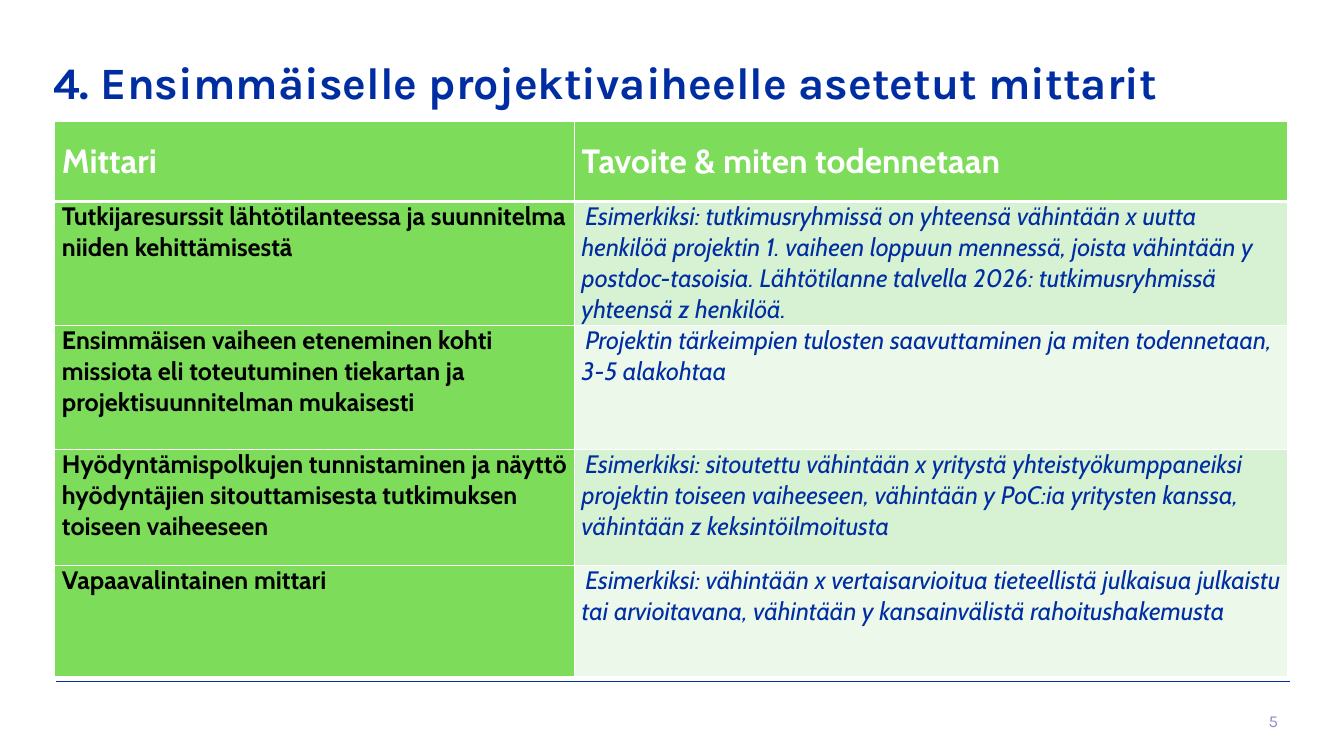
from lxml import etree
from pptx import Presentation
from pptx import util as u
from pptx.dml.color import RGBColor
from pptx.enum import shapes, text
from pptx.oxml import ns

BLUE = RGBColor(0x00, 0x2E, 0xA2)
GREY = RGBColor(0x8C, 0x8F, 0xBF)
GREEN = RGBColor(0x7D, 0xDC, 0x5A)
PALE = RGBColor(0xD7, 0xF2, 0xD2)
PALEST = RGBColor(0xEC, 0xF9, 0xEA)
WHITE = RGBColor(0xFF, 0xFF, 0xFF)
BLACK = RGBColor(0x00, 0x00, 0x00)


def write(frame, words, size, color, font="Cabin", bold=False, italic=False,
          align=text.PP_ALIGN.LEFT, spacing=1.0, indent=0):
    frame.word_wrap = True
    paragraph = frame.paragraphs[0]
    paragraph.alignment = align
    paragraph.line_spacing = spacing
    paragraph._p.get_or_add_pPr().set("indent", str(u.Cm(indent)))
    run = paragraph.add_run()
    run.text = words
    run.font.name = font
    run.font.size = u.Pt(size)
    run.font.bold = bold
    run.font.italic = italic
    run.font.color.rgb = color


def add_borders(cell, bottom):
    properties = cell._tc.get_or_add_tcPr()
    for position, side in enumerate(("lnL", "lnR", "lnT", "lnB")):
        width = bottom if side == "lnB" else 1
        line = etree.Element(ns.qn("a:" + side), w=str(u.Pt(width)))
        fill = etree.SubElement(line, ns.qn("a:solidFill"))
        etree.SubElement(fill, ns.qn("a:srgbClr"), val=str(WHITE))
        properties.insert(position, line)


presentation = Presentation()
presentation.slide_width = u.Cm(33.87)
presentation.slide_height = u.Cm(19.05)
slide = presentation.slides.add_slide(presentation.slide_layouts[6])

rule = slide.shapes.add_connector(shapes.MSO_CONNECTOR.STRAIGHT,
                                  u.Cm(1.4), u.Cm(17.17), u.Cm(32.51), u.Cm(17.17))
rule.line.color.rgb = BLUE
rule.line.width = u.Pt(0.85)
etree.SubElement(rule._element.spPr, ns.qn("a:effectLst"))

title = slide.shapes.add_textbox(u.Cm(1.09), u.Cm(0.3), u.Cm(31.12), u.Cm(3.68))
title.text_frame.vertical_anchor = text.MSO_ANCHOR.MIDDLE
write(title.text_frame, "4. Ensimmäiselle projektivaiheelle asetetut mittarit",
      32, BLUE, font="Karla", bold=True, spacing=0.9)

page_number = slide.shapes.add_textbox(u.Cm(28.04), u.Cm(17.65), u.Cm(4.42), u.Cm(1.02))
page_number.text_frame.vertical_anchor = text.MSO_ANCHOR.MIDDLE
write(page_number.text_frame, "5", 12, GREY, font="Karla", align=text.PP_ALIGN.RIGHT)

rows = [
    ("Mittari", "Tavoite & miten todennetaan"),
    ("Tutkijaresurssit lähtötilanteessa ja suunnitelma niiden kehittämisestä",
     "Esimerkiksi: tutkimusryhmissä on yhteensä vähintään x uutta henkilöä projektin "
     "1. vaiheen loppuun mennessä, joista vähintään y postdoc-tasoisia. Lähtötilanne "
     "talvella 2026: tutkimusryhmissä yhteensä z henkilöä."),
    ("Ensimmäisen vaiheen eteneminen kohti missiota eli toteutuminen tiekartan ja "
     "projektisuunnitelman mukaisesti",
     "Projektin tärkeimpien tulosten saavuttaminen ja miten todennetaan, 3-5 alakohtaa"),
    ("Hyödyntämispolkujen tunnistaminen ja näyttö hyödyntäjien sitouttamisesta "
     "tutkimuksen toiseen vaiheeseen",
     "Esimerkiksi: sitoutettu vähintään x yritystä yhteistyökumppaneiksi projektin "
     "toiseen vaiheeseen, vähintään y PoC:ia yritysten kanssa, vähintään z "
     "keksintöilmoitusta"),
    ("Vapaavalintainen mittari",
     "Esimerkiksi: vähintään x vertaisarvioitua tieteellistä julkaisua julkaistu tai "
     "arvioitavana, vähintään y kansainvälistä rahoitushakemusta"),
]
row_heights = [2.02, 3.12, 3.12, 2.93, 2.8]
column_widths = [13.1, 17.98]

table = slide.shapes.add_table(len(rows), 2, u.Cm(1.38), u.Cm(3.06),
                               u.Cm(sum(column_widths)), u.Cm(sum(row_heights))).table
for column, width in zip(table.columns, column_widths):
    column.width = u.Cm(width)

for i, (words, height) in enumerate(zip(rows, row_heights)):
    table.rows[i].height = u.Cm(height)
    for j in range(2):
        cell = table.cell(i, j)
        cell.margin_left = cell.margin_right = u.Cm(0.18)
        cell.margin_top = cell.margin_bottom = 0
        cell.fill.solid()
        cell.fill.fore_color.rgb = GREEN
        if i == 0:
            cell.vertical_anchor = text.MSO_ANCHOR.MIDDLE
            write(cell.text_frame, words[j], 24, WHITE, bold=True)
        elif j == 0:
            write(cell.text_frame, words[j], 18, BLACK, bold=True)
        else:
            cell.fill.fore_color.rgb = PALE if i % 2 else PALEST
            write(cell.text_frame, words[j], 18, BLUE, italic=True, indent=0.09)
        add_borders(cell, bottom=3 if i == 0 else 1)

presentation.save("out.pptx")
